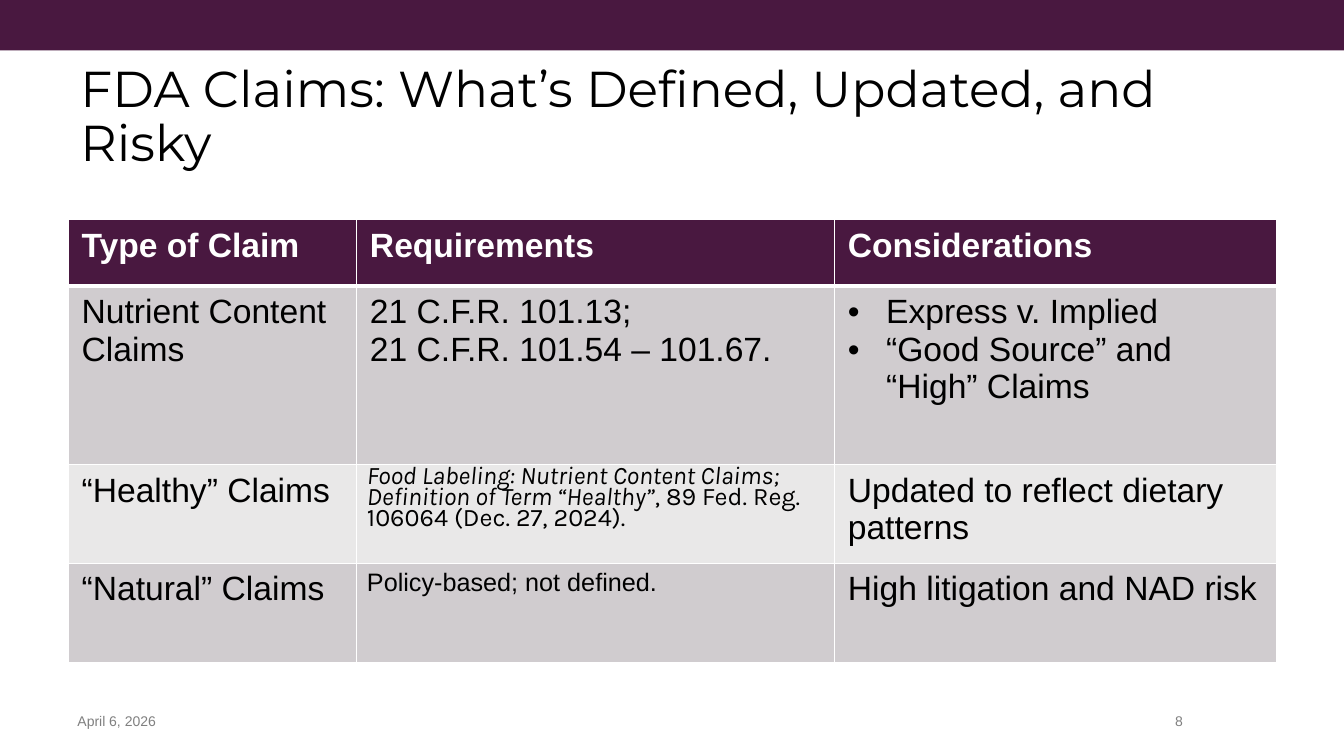
from lxml import etree
from pptx import Presentation
from pptx.dml.color import RGBColor
from pptx.enum.shapes import MSO_SHAPE
from pptx.enum.text import MSO_ANCHOR, PP_ALIGN
from pptx.oxml.ns import qn
from pptx.util import Inches, Pt

RECTANGLE = MSO_SHAPE.RECTANGLE
MIDDLE = MSO_ANCHOR.MIDDLE
LEFT, RIGHT = PP_ALIGN.LEFT, PP_ALIGN.RIGHT

COLORS = {"plum": "491840", "white": "FFFFFF", "black": "000000",
          "gray": "808080", "band": "D0CCCF", "pale": "E9E8E8"}

TITLE = "FDA Claims: What’s Defined, Updated, and Risky"
DATE, NUMBER = "April 6, 2026", "8"
ROWS = [
    [["Type of Claim"], ["Requirements"], ["Considerations"]],
    [["Nutrient Content Claims"],
     ["21 C.F.R. 101.13;", "21 C.F.R. 101.54 – 101.67."],
     ["Express v. Implied", "“Good Source” and “High” Claims"]],
    [["“Healthy” Claims"],
     [("Food Labeling: Nutrient Content Claims; Definition of Term “Healthy”",
       ", 89 Fed. Reg. 106064 (Dec. 27, 2024).")],
     ["Updated to reflect dietary patterns"]],
    [["“Natural” Claims"], ["Policy-based; not defined."],
     ["High litigation and NAD risk"]],
]
BULLETED = (1, 2)
CITATION = (2, 1)
SMALL = [CITATION, (3, 1)]

WIDTH, HEIGHT = 13.33, 7.5
TABLE_LEFT, TABLE_TOP = 0.68, 2.18
COLUMN_WIDTHS = [2.86, 4.74, 4.38]
ROW_HEIGHTS = [0.66, 1.77, 0.98, 0.98]
FOOTER_TOP, FOOTER_HEIGHT = 6.95, 0.4


def color(name):
    return RGBColor.from_string(COLORS[name])


def style(span, size, name, face="Arial", bold=False, italic=False):
    span.font.size, span.font.name = Pt(size), face
    span.font.bold, span.font.italic = bold, italic
    span.font.color.rgb = color(name)


def add_text(page, area, text, size, name, face="Arial", align=LEFT):
    box = page.shapes.add_textbox(*map(Inches, area))
    frame = box.text_frame
    frame.word_wrap = True
    frame.vertical_anchor = MIDDLE
    frame.text = text
    para = frame.paragraphs[0]
    para.alignment = align
    style(para.runs[0], size, name, face)
    return para


def add_borders(cell, bottom, top):
    properties = cell._tc.get_or_add_tcPr()
    widths = {"lnL": 1, "lnR": 1, "lnT": top, "lnB": bottom}
    for position, (tag, width) in enumerate(widths.items()):
        line = etree.Element(qn(f"a:{tag}"), w=str(Pt(width)))
        fill = etree.SubElement(line, qn("a:solidFill"))
        etree.SubElement(fill, qn("a:srgbClr"), val=COLORS["white"])
        properties.insert(position, line)


def add_bullet(para):
    properties = para._p.get_or_add_pPr()
    properties.set("marL", str(Inches(0.38)))
    properties.set("indent", str(-Inches(0.38)))
    etree.SubElement(properties, qn("a:buFont"), typeface="Arial")
    etree.SubElement(properties, qn("a:buChar"), char="•")


def fill_cell(cell, place, lines):
    header = place[0] == 0
    small = place in SMALL
    cited = place == CITATION
    cell.margin_left = cell.margin_right = Inches(0.1 if small else 0.13)
    cell.margin_top = cell.margin_bottom = Inches(0.05 if small else 0.07)
    cell.fill.solid()
    cell.fill.fore_color.rgb = color(
        "plum" if header else "band" if place[0] % 2 else "pale")
    add_borders(cell, 3 if header else 1, 3 if place[0] == 1 else 1)
    frame = cell.text_frame
    for index, line in enumerate(lines):
        para = frame.add_paragraph() if index else frame.paragraphs[0]
        if place == BULLETED:
            add_bullet(para)
        if cited:
            para.line_spacing = Pt(15)
        for part, text in enumerate(line if cited else [line]):
            span = para.add_run()
            span.text = text
            style(span, 18 if small else 24, "white" if header else "black",
                  "Karla" if cited else "Arial", header, cited and part == 0)


def add_claims_table(page):
    area = (TABLE_LEFT, TABLE_TOP, sum(COLUMN_WIDTHS), sum(ROW_HEIGHTS))
    table = page.shapes.add_table(len(ROWS), len(COLUMN_WIDTHS), *map(Inches, area)).table
    for column, width in zip(table.columns, COLUMN_WIDTHS):
        column.width = Inches(width)
    for row, height in zip(table.rows, ROW_HEIGHTS):
        row.height = Inches(height)
    for row, cells in enumerate(ROWS):
        for column, lines in enumerate(cells):
            fill_cell(table.cell(row, column), (row, column), lines)


def main():
    deck = Presentation()
    deck.slide_width, deck.slide_height = Inches(WIDTH), Inches(HEIGHT)
    page = deck.slides.add_slide(deck.slide_layouts[6])
    banner = page.shapes.add_shape(RECTANGLE, 0, 0, deck.slide_width, Inches(0.5))
    banner.shadow.inherit = False
    banner.fill.solid()
    banner.fill.fore_color.rgb = color("plum")
    banner.line.fill.background()
    title = add_text(page, (0.7, 0.5, 11.96, 1.35), TITLE, 36, "black", "Montserrat")
    title.line_spacing = 0.9
    add_claims_table(page)
    for left, width, text, align in [(0.67, 2.31, DATE, LEFT), (10.48, 1.35, NUMBER, RIGHT)]:
        footer = add_text(page, (left, FOOTER_TOP, width, FOOTER_HEIGHT),
                          text, 10, "gray", align=align)
        footer.space_after = Pt(6)
    deck.save("out.pptx")


if __name__ == "__main__":
    main()
